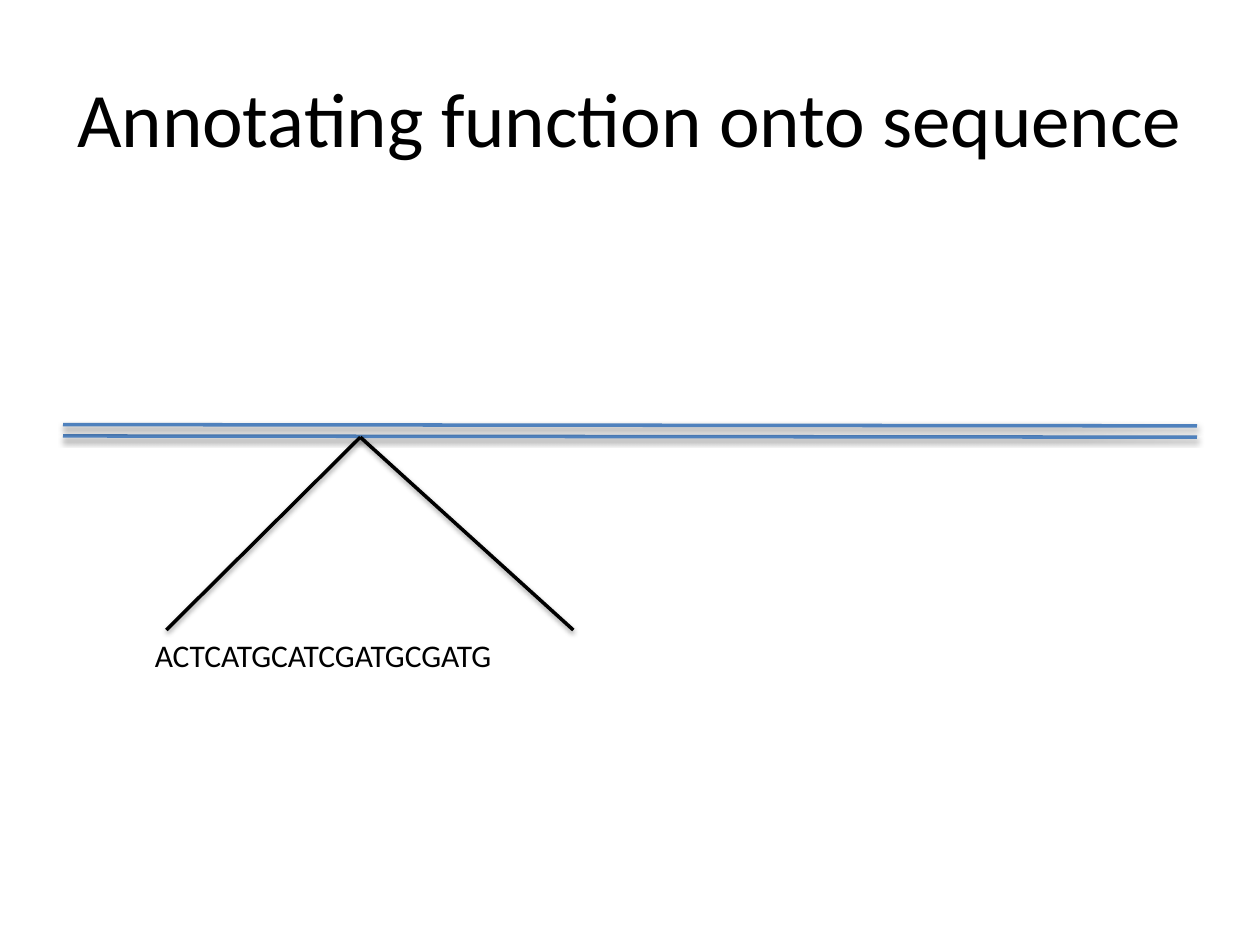
"""Build a slide that zooms from a double-stranded sequence into its bases."""
from typing import NamedTuple

from lxml.etree import SubElement
from pptx import Presentation
from pptx.dml.color import RGBColor
from pptx.enum.shapes import MSO_CONNECTOR
from pptx.enum.text import MSO_ANCHOR, MSO_AUTO_SIZE, PP_ALIGN
from pptx.oxml.ns import qn
from pptx.util import Inches, Pt

BLACK = RGBColor(0x00, 0x00, 0x00)
BLUE = RGBColor(0x4F, 0x81, 0xBD)
WIDTH, HEIGHT = Inches(10), Inches(7.5)
COLUMN, ROW = WIDTH / 100, HEIGHT / 75


class Stroke(NamedTuple):
    start: tuple[float, float]
    end: tuple[float, float]
    color: RGBColor


APEX = (28.6, 34.7)
STROKES = (
    Stroke((5, 34.6), (95, 34.7), BLUE),
    Stroke((13.2, 50), APEX, BLACK),
    Stroke(APEX, (45.5, 50), BLACK),
    Stroke((5, 33.7), (95, 33.8), BLUE),
)


def place(column: float, row: float) -> tuple[int, int]:
    return round(column * COLUMN), round(row * ROW)


def add_shadow(connector) -> None:
    effects = SubElement(connector._element.spPr, qn("a:effectLst"))
    shadow = SubElement(effects, qn("a:outerShdw"), blurRad=str(Pt(3.1)),
                        dist=str(Pt(1.6)), dir="5400000", rotWithShape="0")
    tint = SubElement(shadow, qn("a:srgbClr"), val=str(BLACK))
    SubElement(tint, qn("a:alpha"), val="38000")


def draw_stroke(slide, stroke: Stroke) -> None:
    connector = slide.shapes.add_connector(
        MSO_CONNECTOR.STRAIGHT, *place(*stroke.start), *place(*stroke.end))
    connector.line.color.rgb = stroke.color
    connector.line.width = Pt(2)
    add_shadow(connector)


def write(frame, text: str, *, size: float, align: PP_ALIGN,
          anchor: MSO_ANCHOR, wrap: bool, fit: MSO_AUTO_SIZE) -> None:
    frame.word_wrap = wrap
    frame.auto_size = fit
    frame.vertical_anchor = anchor
    paragraph = frame.paragraphs[0]
    paragraph.alignment = align
    run = paragraph.add_run()
    run.text = text
    run.font.name = "Calibri"
    run.font.size = Pt(size)
    run.font.color.rgb = BLACK


def main() -> None:
    deck = Presentation()
    deck.slide_width, deck.slide_height = WIDTH, HEIGHT
    slide = deck.slides.add_slide(deck.slide_layouts[5])

    title = slide.shapes.title
    title.left, title.top = place(5, 3)
    title.width, title.height = place(90, 12.5)
    write(title.text_frame, "Annotating function onto sequence", size=44,
          align=PP_ALIGN.CENTER, anchor=MSO_ANCHOR.MIDDLE, wrap=True,
          fit=MSO_AUTO_SIZE.NONE)

    bases = slide.shapes.add_textbox(*place(11.3, 50), *place(36.5, 4))
    write(bases.text_frame, "ACTCATGCATCGATGCGATG", size=18,
          align=PP_ALIGN.LEFT, anchor=MSO_ANCHOR.TOP, wrap=False,
          fit=MSO_AUTO_SIZE.SHAPE_TO_FIT_TEXT)

    for stroke in STROKES:
        draw_stroke(slide, stroke)
    deck.save("out.pptx")


if __name__ == "__main__":
    main()
